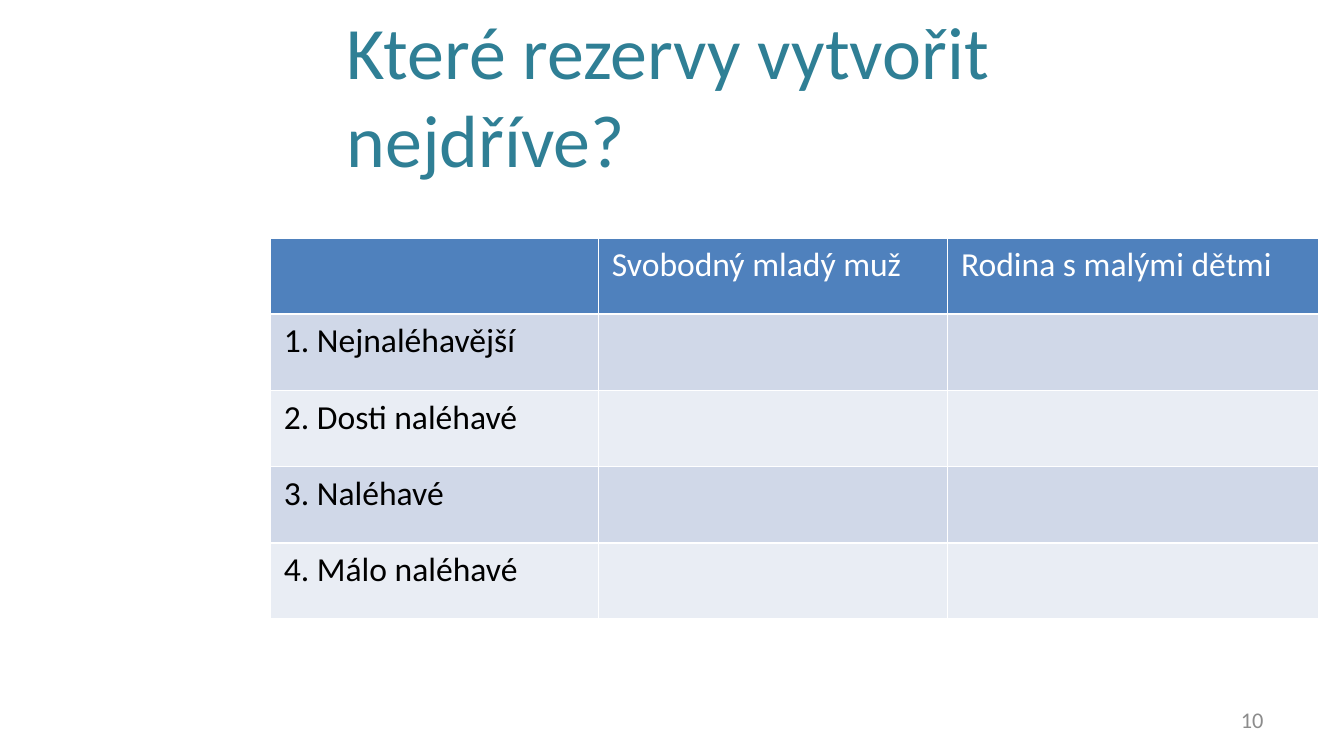
from dataclasses import dataclass

from pptx import Presentation
from pptx import util as u
from pptx.dml.color import RGBColor
from pptx.enum import text

HUES = {
    "title": "2F7F95",
    "number": "8C8C8C",
    "head": "4F81BD",
    "odd": "D0D8E8",
    "even": "E9EDF4",
    "white": "FFFFFF",
    "black": "000000",
}
FONT = "Calibri"
ROWS = [
    ("", "Svobodný mladý muž", "Rodina s malými dětmi"),
    ("1. Nejnaléhavější", "", ""),
    ("2. Dosti naléhavé", "", ""),
    ("3. Naléhavé", "", ""),
    ("4. Málo naléhavé", "", ""),
]
WIDTHS = (6.2, 6.6, 7.01)
HEIGHT = 1.44


@dataclass
class Label:
    words: str
    left: float
    top: float
    width: float
    height: float
    size: float
    hue: str
    align: text.PP_ALIGN


LABELS = [
    Label("Které rezervy vytvořit nejdříve?", 6.3, 0.58, 17.83, 2.39,
          39.6, "title", text.PP_ALIGN.LEFT),
    Label("10", 18.21, 13.23, 5.92, 0.76,
          12, "number", text.PP_ALIGN.RIGHT),
]


def color(hue: str) -> RGBColor:
    return RGBColor.from_string(HUES[hue])


def add_run(para, words: str, size: float, hue: str) -> None:
    run = para.add_run()
    run.text = words
    run.font.name = FONT
    run.font.size = u.Pt(size)
    run.font.bold = False
    run.font.color.rgb = color(hue)


def add_label(slide, label: Label) -> None:
    box = slide.shapes.add_textbox(u.Cm(label.left), u.Cm(label.top),
                                   u.Cm(label.width), u.Cm(label.height))
    frame = box.text_frame
    frame.word_wrap = True
    frame.vertical_anchor = text.MSO_ANCHOR.MIDDLE
    para = frame.paragraphs[0]
    para.alignment = label.align
    add_run(para, label.words, label.size, label.hue)


def add_grid(slide) -> None:
    """Draw the table; its default style supplies the white borders."""
    table = slide.shapes.add_table(
        len(ROWS), len(WIDTHS), u.Cm(5.11), u.Cm(4.5),
        u.Cm(sum(WIDTHS)), u.Cm(HEIGHT * len(ROWS))).table
    for col, width in zip(table.columns, WIDTHS):
        col.width = u.Cm(width)
    for i, row in enumerate(ROWS):
        table.rows[i].height = u.Cm(HEIGHT)
        fill = "head" if i == 0 else "odd" if i % 2 else "even"
        for j, words in enumerate(row):
            cell = table.cell(i, j)
            cell.fill.solid()
            cell.fill.fore_color.rgb = color(fill)
            if words:
                add_run(cell.text_frame.paragraphs[0], words, 18,
                        "black" if i else "white")


def main() -> None:
    deck = Presentation()
    deck.slide_width, deck.slide_height = u.Cm(25.4), u.Cm(14.29)
    slide = deck.slides.add_slide(deck.slide_layouts[6])
    for label in LABELS:
        add_label(slide, label)
    add_grid(slide)
    deck.save("out.pptx")


if __name__ == "__main__":
    main()
